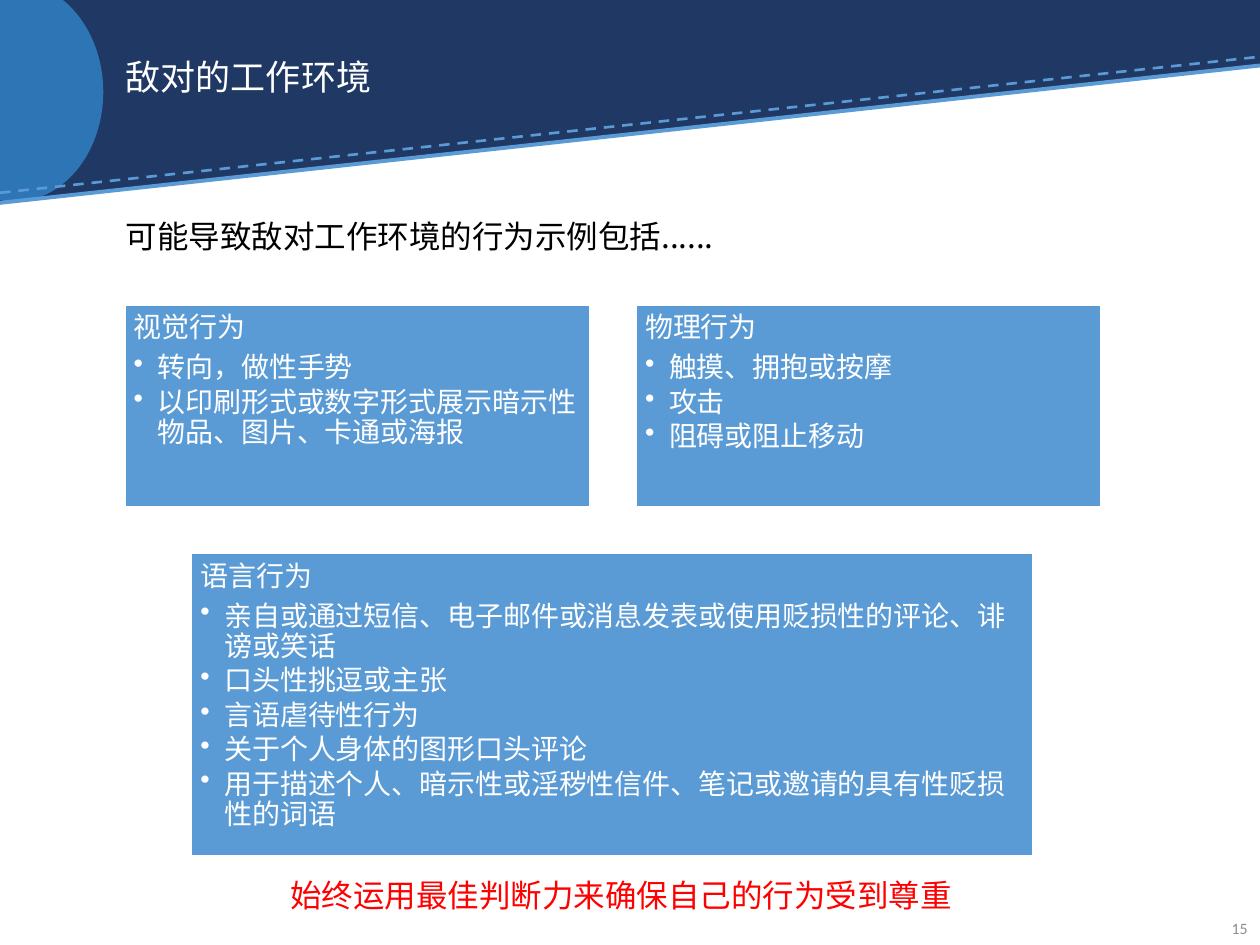
from lxml.etree import SubElement
from pptx import Presentation
from pptx.dml.color import RGBColor
from pptx.enum.dml import MSO_LINE
from pptx.enum.shapes import MSO_CONNECTOR, MSO_SHAPE
from pptx.enum.text import MSO_ANCHOR, MSO_AUTO_SIZE, PP_ALIGN
from pptx.oxml.ns import qn
from pptx.util import Inches, Pt

CHINESE = "Noto Sans CJK SC"
NAVY, BLUE, SKY, WHITE = "203864", "2E75B6", "5B9BD5", "FFFFFF"


def color(value):
    return RGBColor.from_string(value)


def add_block(page, kind, box, fill, outline=None):
    shape = page.shapes.add_shape(kind, *map(Inches, box))
    shape.shadow.inherit = False
    shape.fill.solid()
    shape.fill.fore_color.rgb = color(fill)
    if outline:
        shape.line.color.rgb = color(outline)
        shape.line.width = Pt(1)
    else:
        shape.line.fill.background()
    return shape


def add_rule(page, start, end, width, dash=None):
    rule = page.shapes.add_connector(
        MSO_CONNECTOR.STRAIGHT, *map(Inches, start + end))
    rule.line.color.rgb = color(SKY)
    rule.line.width = Pt(width)
    if dash:
        rule.line.dash_style = dash
    SubElement(rule._element.spPr, qn("a:effectLst"))


def write(para, text, size=18, fill="000000", font=CHINESE,
          align=PP_ALIGN.LEFT, spacing=None, after=None, bullet=False):
    if bullet:
        para.level = 1
        props = para._p.get_or_add_pPr()
        props.set("marL", str(Inches(0.19)))
        props.set("indent", str(Inches(-0.19)))
        SubElement(props, qn("a:buChar"), char="•")
    para.alignment = align
    if spacing:
        para.line_spacing = spacing
    if after:
        para.space_after = Pt(after)
    span = para.add_run()
    span.text = text
    span.font.size = Pt(size)
    span.font.color.rgb = color(fill)
    span.font.name = font
    SubElement(span._r.get_or_add_rPr(), qn("a:ea"), typeface=font)


def add_text(page, box, text, anchor=MSO_ANCHOR.TOP, grow=False, **style):
    frame = page.shapes.add_textbox(*map(Inches, box)).text_frame
    frame.word_wrap = True
    frame.vertical_anchor = anchor
    if grow:
        frame.auto_size = MSO_AUTO_SIZE.SHAPE_TO_FIT_TEXT
    write(frame.paragraphs[0], text, **style)


def add_banner(page, box, title):
    left, top, width, height = box
    band = 0.52
    right, bottom = left + width, top + height
    add_block(page, MSO_SHAPE.RECTANGLE, (left, top, width, band), NAVY)
    wedge = add_block(page, MSO_SHAPE.RIGHT_TRIANGLE,
                      (left, top + 0.51, width, height - 0.51), NAVY)
    wedge._element.spPr.xfrm.set("flipV", "1")
    add_block(page, MSO_SHAPE.OVAL,
              (left - 0.59, top - 0.14, 1.41, 1.74), BLUE)
    # Slanted edge and the dashed line above it
    add_rule(page, (left, bottom - 0.07), (right, top + 0.45), 1.5, MSO_LINE.DASH)
    add_rule(page, (left, bottom + 0.01), (right, top + band), 2.25)
    add_text(page, (left + 0.9, top + 0.2, 8.05, 0.86), title,
             anchor=MSO_ANCHOR.MIDDLE, size=20, fill=WHITE, spacing=0.9)


def add_card(page, box, heading, items):
    card = add_block(page, MSO_SHAPE.RECTANGLE, box, SKY, WHITE)
    frame = card.text_frame
    frame.word_wrap = True
    frame.vertical_anchor = MSO_ANCHOR.TOP
    frame.margin_left = frame.margin_right = Inches(0.07)
    frame.margin_top = frame.margin_bottom = Inches(0.07)
    style = dict(size=16, fill=WHITE, spacing=0.9)
    write(frame.paragraphs[0], heading, after=5.6, **style)
    for item in items:
        write(frame.add_paragraph(), item, after=2.4, bullet=True, **style)


CARDS = [
    ((0.99, 2.42, 3.69, 1.6), "视觉行为", [
        "转向，做性手势",
        "以印刷形式或数字形式展示暗示性物品、图片、卡通或海报"]),
    ((5.05, 2.42, 3.69, 1.6), "物理行为", [
        "触摸、拥抱或按摩",
        "攻击",
        "阻碍或阻止移动"]),
    ((1.52, 4.39, 6.68, 2.4), "语言行为", [
        "亲自或通过短信、电子邮件或消息发表或使用贬损性的评论、诽谤或笑话",
        "口头性挑逗或主张",
        "言语虐待性行为",
        "关于个人身体的图形口头评论",
        "用于描述个人、暗示性或淫秽性信件、笔记或邀请的具有性贬损性的词语"]),
]


def main():
    deck = Presentation()
    deck.slide_width, deck.slide_height = Inches(10), Inches(7.5)
    page = deck.slides.add_slide(deck.slide_layouts[6])

    add_banner(page, (0, 0, 10, 1.6), "敌对的工作环境")
    add_text(page, (0.9, 1.67, 8.58, 0.4),
             "可能导致敌对工作环境的行为示例包括......", grow=True)
    for box, heading, items in CARDS:
        add_card(page, box, heading, items)

    # Closing reminder and page number
    add_text(page, (0.41, 6.9, 9.04, 0.4),
             "始终运用最佳判断力来确保自己的行为受到尊重",
             grow=True, fill="FF0000", align=PP_ALIGN.CENTER)
    add_text(page, (9.47, 7.17, 0.53, 0.4), "15", anchor=MSO_ANCHOR.MIDDLE,
             size=9, fill="8C8C8C", font="Calibri", align=PP_ALIGN.RIGHT)
    deck.save("out.pptx")


if __name__ == "__main__":
    main()
